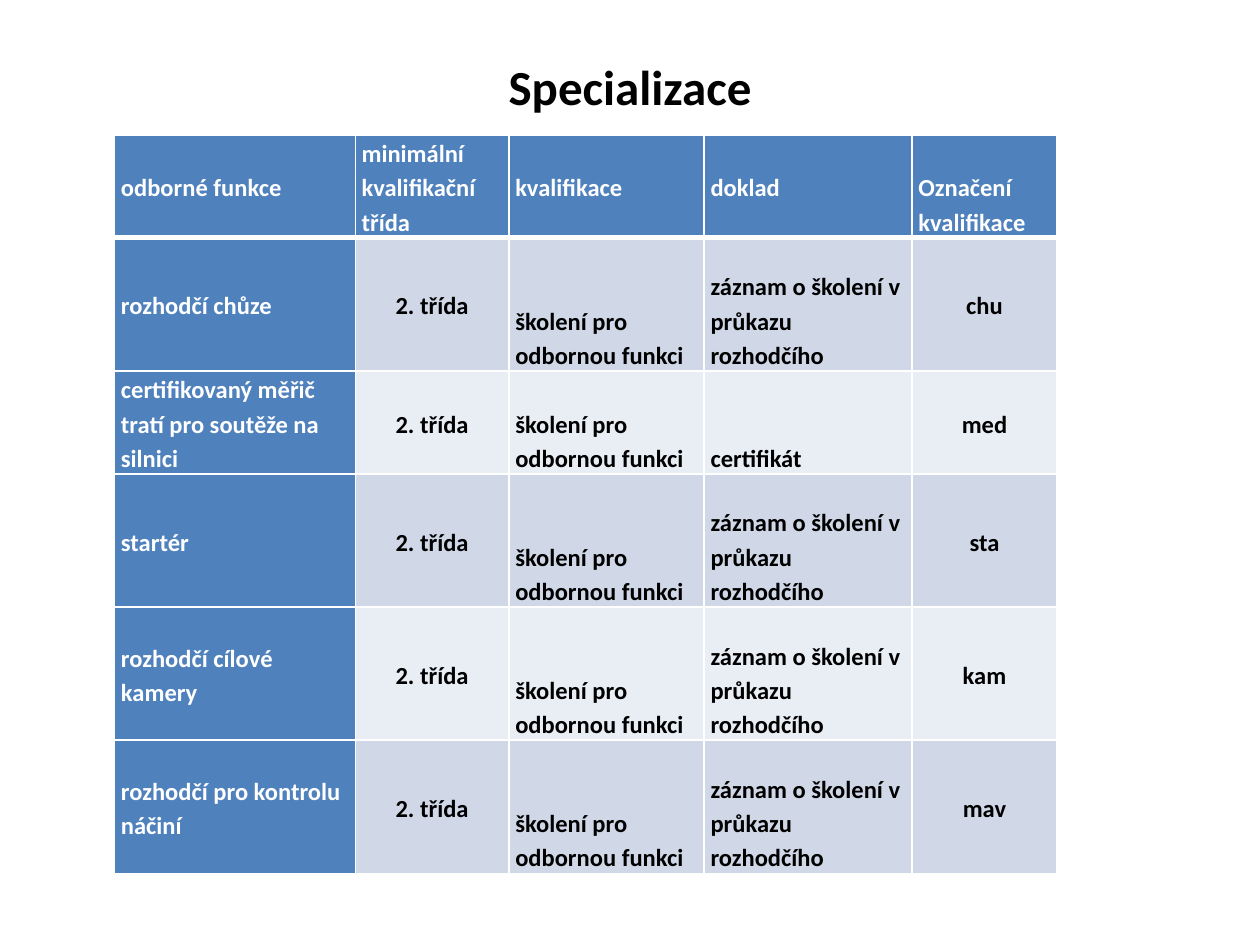
from dataclasses import dataclass

from lxml.etree import SubElement
from pptx import Presentation
from pptx.dml.color import RGBColor
from pptx.enum.text import MSO_ANCHOR, PP_ALIGN
from pptx.oxml.ns import qn
from pptx.util import Inches, Pt


@dataclass(frozen=True)
class Theme:
    font: str = "Calibri"
    title_size: int = 28
    table_size: int = 14
    text: str = "000000"
    light: str = "FFFFFF"
    accent: str = "4F81BD"
    bands: tuple = ("D0D8E8", "E9EDF4")
    line: float = 1
    header_line: float = 3


THEME = Theme()
COLUMNS = (1.91, 1.22, 1.55, 1.65, 1.15)
ROWS = (0.78, 1.05, 0.78, 1.05, 1.05, 1.05)
CENTERED = (1, 4)
HEADERS = ("odborné funkce", "minimální kvalifikační třída", "kvalifikace",
           "doklad", "Označení kvalifikace")
RECORD = "záznam o školení v průkazu rozhodčího"
FUNCTIONS = (
    ("rozhodčí chůze", RECORD, "chu"),
    ("certifikovaný měřič tratí pro soutěže na silnici", "certifikát", "med"),
    ("startér", RECORD, "sta"),
    ("rozhodčí cílové kamery", RECORD, "kam"),
    ("rozhodčí pro kontrolu náčiní", RECORD, "mav"),
)


def add_run(p, text, size, color):
    r = p.add_run()
    r.text = text
    r.font.name = THEME.font
    r.font.size = Pt(size)
    r.font.bold = True
    r.font.color.rgb = RGBColor.from_string(color)


def set_borders(cell, top, bottom):
    widths = {"a:lnL": THEME.line, "a:lnR": THEME.line, "a:lnT": top, "a:lnB": bottom}
    tc_pr = cell._tc.get_or_add_tcPr()
    for tag, width in widths.items():
        ln = SubElement(tc_pr, qn(tag), w=str(Pt(width)))
        fill = SubElement(ln, qn("a:solidFill"))
        SubElement(fill, qn("a:srgbClr"), val=THEME.light)


def fill_cell(cell, text, row, col):
    header = row == 0
    accented = header or col == 0
    set_borders(cell,
                THEME.header_line if row == 1 else THEME.line,
                THEME.header_line if header else THEME.line)
    cell.fill.solid()
    color = THEME.accent if accented else THEME.bands[(row - 1) % 2]
    cell.fill.fore_color.rgb = RGBColor.from_string(color)
    cell.margin_left = cell.margin_right = Inches(0.05)
    cell.margin_top = cell.margin_bottom = 0
    at_bottom = col in ((1, 4) if header else (2, 3))
    cell.vertical_anchor = MSO_ANCHOR.BOTTOM if at_bottom else MSO_ANCHOR.MIDDLE
    p = cell.text_frame.paragraphs[0]
    p.line_spacing = 1.15
    centered = not header and col in CENTERED
    p.alignment = PP_ALIGN.CENTER if centered else PP_ALIGN.LEFT
    add_run(p, text, THEME.table_size, THEME.light if accented else THEME.text)


def add_title(s, left, top, width, height):
    sp = s.shapes.title
    sp.left, sp.top, sp.width, sp.height = left, top, width, height
    tf = sp.text_frame
    tf.word_wrap = True
    tf.vertical_anchor = MSO_ANCHOR.MIDDLE
    p = tf.paragraphs[0]
    p.alignment = PP_ALIGN.CENTER
    add_run(p, "Specializace", THEME.title_size, THEME.text)


def add_functions_table(s, left, top, width, height):
    table = s.shapes.add_table(len(ROWS), len(COLUMNS), left, top, width, height).table
    for column, share in zip(table.columns, COLUMNS):
        column.width = int(width * share / sum(COLUMNS))
    for row, share in zip(table.rows, ROWS):
        row.height = int(height * share / sum(ROWS))
    body = [(name, "2. třída", "školení pro odbornou funkci", proof, mark)
            for name, proof, mark in FUNCTIONS]
    for i, texts in enumerate([HEADERS, *body]):
        for j, text in enumerate(texts):
            fill_cell(table.cell(i, j), text, i, j)


def main():
    prs = Presentation()
    prs.slide_width, prs.slide_height = Inches(10), Inches(7.5)
    s = prs.slides.add_slide(prs.slide_layouts[5])
    add_title(s, Inches(0.5), Inches(0.3), Inches(9), Inches(0.77))
    add_functions_table(s, Inches(0.91), Inches(1.07), Inches(7.48), Inches(5.8))
    prs.save("out.pptx")


if __name__ == "__main__":
    main()
